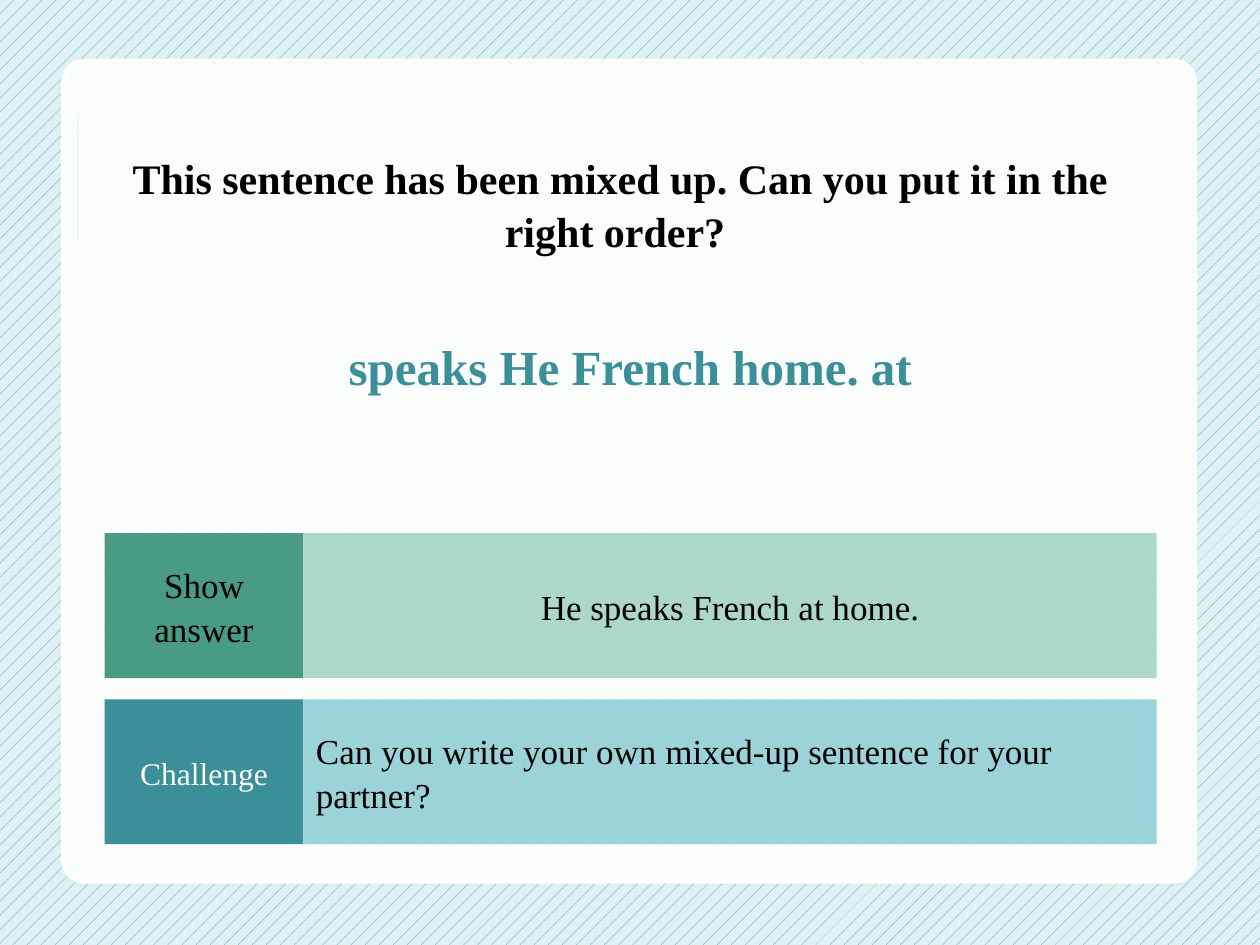
from dataclasses import dataclass

from pptx import Presentation
from pptx.dml.color import RGBColor
from pptx.enum.dml import MSO_PATTERN
from pptx.enum.shapes import MSO_CONNECTOR, MSO_SHAPE
from pptx.enum.text import MSO_ANCHOR, MSO_AUTO_SIZE, PP_ALIGN
from pptx.oxml.ns import qn
from pptx.shapes.autoshape import Shape
from pptx.slide import Slide
from pptx.text.text import TextFrame
from pptx.util import Cm, Pt
from lxml import etree

CENTER, LEFT = PP_ALIGN.CENTER, PP_ALIGN.LEFT
TOP, MIDDLE = MSO_ANCHOR.TOP, MSO_ANCHOR.MIDDLE
RECTANGLE, ROUNDED = MSO_SHAPE.RECTANGLE, MSO_SHAPE.ROUNDED_RECTANGLE
STRAIGHT = MSO_CONNECTOR.STRAIGHT
DOTTED = MSO_PATTERN.PERCENT_10
NO_FIT, GROW = MSO_AUTO_SIZE.NONE, MSO_AUTO_SIZE.SHAPE_TO_FIT_TEXT
TITLE_ONLY = 5


@dataclass(frozen=True)
class Theme:
    font: str = "Times New Roman"
    title_size: int = 24
    prompt_size: int = 28
    body_size: int = 20
    label_size: int = 18
    line_spacing: float = 1.05
    black: str = "000000"
    white: str = "FFFFFF"
    green: str = "4A9B83"
    pale_green: str = "ACD7CA"
    teal: str = "3A8F98"
    pale_teal: str = "9BD3D9"
    accent: str = "58B6C0"
    pattern: str = "3494BA"
    backdrop: str = "DEF0F2"


THEME = Theme()


@dataclass(frozen=True)
class Box:
    left: float
    top: float
    width: float
    height: float


@dataclass(frozen=True)
class TextStyle:
    size: int
    color: str = THEME.black
    bold: bool = False
    align: PP_ALIGN = CENTER


@dataclass(frozen=True)
class Row:
    label: str
    label_style: TextStyle
    label_fill: str
    body: str
    body_style: TextStyle
    body_fill: str


BODY = TextStyle(THEME.body_size)
ROWS = (
    Row("Show answer", BODY, THEME.green,
        "He speaks French at home.", BODY, THEME.pale_green),
    Row("Challenge", TextStyle(THEME.label_size, THEME.white), THEME.teal,
        "Can you write your own mixed-up sentence for your partner?",
        TextStyle(THEME.body_size, align=LEFT), THEME.pale_teal),
)
ROW_LEFT, ROW_TOP, ROW_HEIGHT, ROW_PITCH = 2.11, 10.75, 2.92, 3.35
LABEL_WIDTH, BODY_WIDTH = 4.01, 17.2


def color(value: str) -> RGBColor:
    return RGBColor.from_string(value)


def place(shape: Shape, box: Box) -> None:
    shape.left, shape.top = Cm(box.left), Cm(box.top)
    shape.width, shape.height = Cm(box.width), Cm(box.height)


def write(frame: TextFrame, text: str, style: TextStyle) -> None:
    para = frame.paragraphs[0]
    para.alignment = style.align
    para.line_spacing = THEME.line_spacing
    span = para.add_run()
    span.text = text
    span.font.name = THEME.font
    span.font.size = Pt(style.size)
    span.font.bold = style.bold
    span.font.color.rgb = color(style.color)


def add_block(slide: Slide, kind: MSO_SHAPE, box: Box, fill: str) -> Shape:
    block = slide.shapes.add_shape(
        kind, Cm(box.left), Cm(box.top), Cm(box.width), Cm(box.height))
    block.shadow.inherit = False
    block.fill.solid()
    block.fill.fore_color.rgb = color(fill)
    block.line.fill.background()
    return block


def add_cell(slide: Slide, box: Box, fill: str, text: str, style: TextStyle) -> None:
    frame = add_block(slide, RECTANGLE, box, fill).text_frame
    frame.word_wrap = True
    frame.vertical_anchor = MIDDLE
    write(frame, text, style)


def add_row(slide: Slide, row: Row, top: float) -> None:
    label_box = Box(ROW_LEFT, top, LABEL_WIDTH, ROW_HEIGHT)
    body_box = Box(ROW_LEFT + LABEL_WIDTH, top, BODY_WIDTH, ROW_HEIGHT)
    add_cell(slide, label_box, row.label_fill, row.label, row.label_style)
    add_cell(slide, body_box, row.body_fill, row.body, row.body_style)


def set_background(slide: Slide) -> None:
    fill = slide.background.fill
    fill.patterned()
    fill.pattern = DOTTED
    fill.fore_color.rgb = color(THEME.pattern)
    fill.back_color.rgb = color(THEME.backdrop)


def add_accent_line(slide: Slide) -> None:
    accent = slide.shapes.add_connector(STRAIGHT, Cm(1.57), Cm(4.83), Cm(1.57), Cm(2.29))
    accent.line.color.rgb = color(THEME.accent)
    accent.line.width = Pt(1.5)
    etree.SubElement(accent._element.spPr, qn("a:effectLst"))


def add_panel(slide: Slide) -> None:
    panel = add_block(slide, ROUNDED, Box(1.27, 1.22, 22.83, 16.56), THEME.white)
    panel.adjustments[0] = 0.026
    panel.line.color.rgb = color(THEME.white)
    panel.line.width = Pt(2)
    fill_color = panel._element.spPr.find(qn("a:solidFill")).find(qn("a:srgbClr"))
    etree.SubElement(fill_color, qn("a:alpha"), val="90000")


def add_title(slide: Slide) -> None:
    title = slide.shapes.title
    slide.shapes._spTree.append(title._element)
    place(title, Box(1.9, 2.9, 21.21, 2.31))
    frame = title.text_frame
    frame.word_wrap = True
    frame.auto_size = NO_FIT
    frame.vertical_anchor = TOP
    write(frame, "This sentence has been mixed up. Can you put it in the right order? ",
          TextStyle(THEME.title_size, bold=True))


def add_prompt(slide: Slide) -> None:
    prompt = slide.shapes.add_textbox(Cm(6.71), Cm(6.6), Cm(11.99), Cm(1.45))
    frame = prompt.text_frame
    frame.word_wrap = False
    frame.auto_size = GROW
    write(frame, "speaks He French home. at",
          TextStyle(THEME.prompt_size, THEME.teal, bold=True))


def main() -> None:
    deck = Presentation()
    deck.slide_width, deck.slide_height = Cm(25.4), Cm(19.05)
    page = deck.slides.add_slide(deck.slide_layouts[TITLE_ONLY])
    set_background(page)
    add_accent_line(page)
    add_panel(page)
    add_title(page)
    add_prompt(page)
    for index, row in enumerate(ROWS):
        add_row(page, row, ROW_TOP + index * ROW_PITCH)
    deck.save("out.pptx")


if __name__ == "__main__":
    main()
